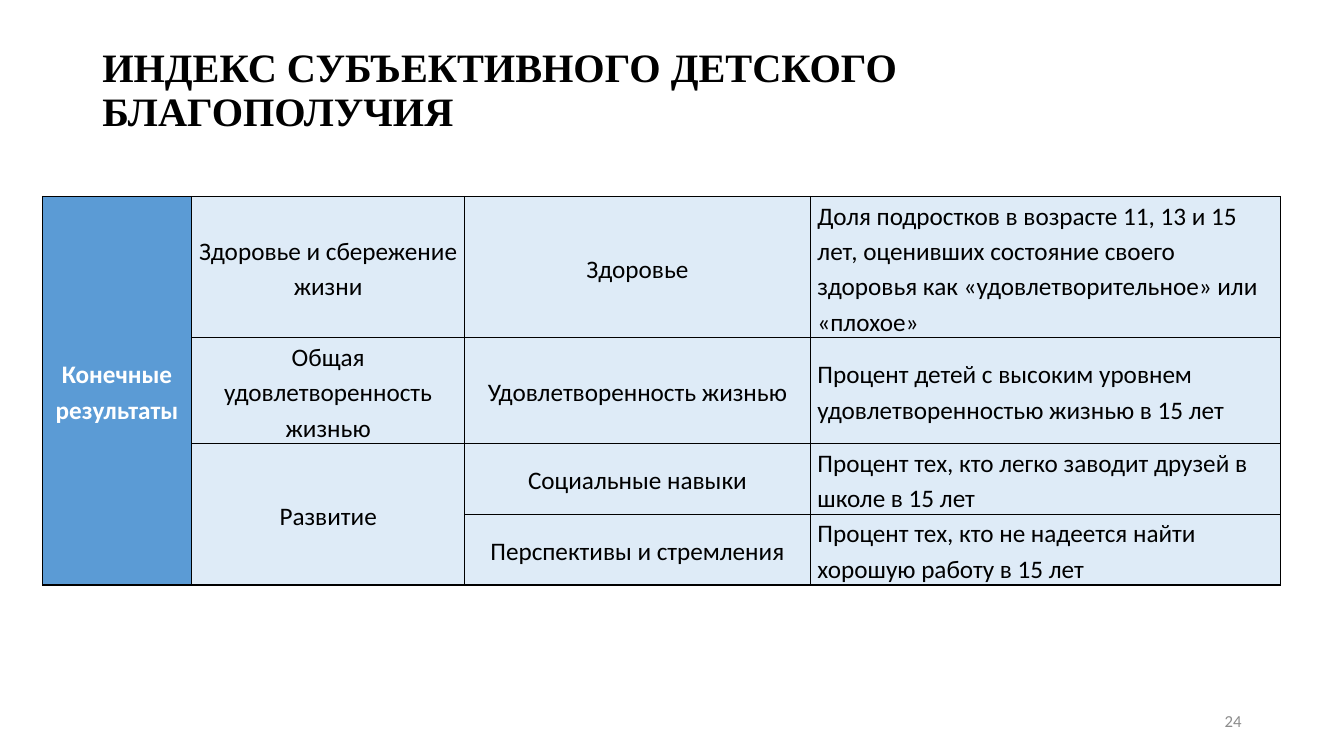
"""Build the slide with the table of the children's subjective well-being index."""
from lxml.etree import SubElement as Sub
from pptx import Presentation
from pptx.dml.color import RGBColor
from pptx.enum.text import MSO_ANCHOR as Anchor, PP_ALIGN as Align
from pptx.oxml.ns import qn
from pptx.util import Cm, Pt

TITLE = "ИНДЕКС СУБЪЕКТИВНОГО ДЕТСКОГО БЛАГОПОЛУЧИЯ"
PAGE = "24"
ROWS = [
    ("Конечные результаты", "Здоровье и сбережение жизни", "Здоровье",
     "Доля подростков в возрасте 11, 13 и 15 лет, оценивших состояние своего "
     "здоровья как «удовлетворительное» или «плохое»"),
    ("", "Общая удовлетворенность жизнью", "Удовлетворенность жизнью",
     "Процент детей с высоким уровнем удовлетворенностью жизнью в 15 лет"),
    ("", "Развитие", "Социальные навыки",
     "Процент тех, кто легко заводит друзей в школе в 15 лет"),
    ("", "", "Перспективы и стремления",
     "Процент тех, кто не надеется найти хорошую работу в 15 лет"),
]
LINES = [4, 3, 2, 2]
WIDTHS = [3.76, 6.88, 8.71, 11.84]
MERGES = [((0, 0), (3, 0)), ((2, 1), (3, 1))]
LINE = 0.89
BLUE, PALE, BLACK, WHITE, GREY = "5B9BD5", "DEEBF7", "000000", "FFFFFF", "8C8C8C"


def color(code):
    return RGBColor.from_string(code)


def write(frame, text, size, ink, face="Calibri", bold=False, align=Align.LEFT):
    para = frame.paragraphs[0]
    para.alignment = align
    run = para.add_run()
    run.text = text
    font = run.font
    font.name, font.size, font.bold = face, Pt(size), bold
    font.color.rgb = color(ink)
    return para


def add_box(slide, left, top, width, height):
    box = slide.shapes.add_textbox(Cm(left), Cm(top), Cm(width), Cm(height))
    frame = box.text_frame
    frame.word_wrap = True
    frame.vertical_anchor = Anchor.MIDDLE
    return frame


def add_edges(cell):
    props = cell._tc.get_or_add_tcPr()
    for side in ("lnL", "lnR", "lnT", "lnB"):
        edge = Sub(props, qn("a:" + side), w=str(Pt(1)))
        fill = Sub(edge, qn("a:solidFill"))
        Sub(fill, qn("a:srgbClr"), val=BLACK)


def style_cell(cell, text, col):
    add_edges(cell)
    cell.fill.solid()
    cell.fill.fore_color.rgb = color(PALE if col else BLUE)
    cell.vertical_anchor = Anchor.MIDDLE
    cell.margin_left = cell.margin_right = Cm(0.18)
    cell.margin_top = cell.margin_bottom = 0
    if text:
        align = Align.LEFT if col == 3 else Align.CENTER
        para = write(cell.text_frame, text, 18, BLACK if col else WHITE,
                     bold=col == 0, align=align)
        para.line_spacing = 1.15
        para.space_after = Pt(8)


def add_grid(slide):
    frame = slide.shapes.add_table(len(ROWS), len(WIDTHS), Cm(1.07), Cm(4.95),
                                   Cm(sum(WIDTHS)), Cm(sum(LINES) * LINE))
    table = frame.table
    table.first_row = table.horz_banding = False
    for col, width in zip(table.columns, WIDTHS):
        col.width = Cm(width)
    for row, count in zip(table.rows, LINES):
        row.height = Cm(count * LINE)
    for start, end in MERGES:
        table.cell(*start).merge(table.cell(*end))
    for r, texts in enumerate(ROWS):
        for c, text in enumerate(texts):
            style_cell(table.cell(r, c), text, c)


def main():
    deck = Presentation()
    deck.slide_width, deck.slide_height = Cm(33.87), Cm(19.05)
    slide = deck.slides.add_slide(deck.slide_layouts[6])
    head = add_box(slide, 2.33, 1.01, 29.21, 3.68)
    head.margin_bottom = Cm(1.22)
    write(head, TITLE, 28.8, BLACK, "Times New Roman", True).line_spacing = 0.9
    write(add_box(slide, 23.92, 17.66, 7.62, 1.01), PAGE, 12, GREY, align=Align.RIGHT)
    add_grid(slide)
    deck.save("out.pptx")


if __name__ == "__main__":
    main()
